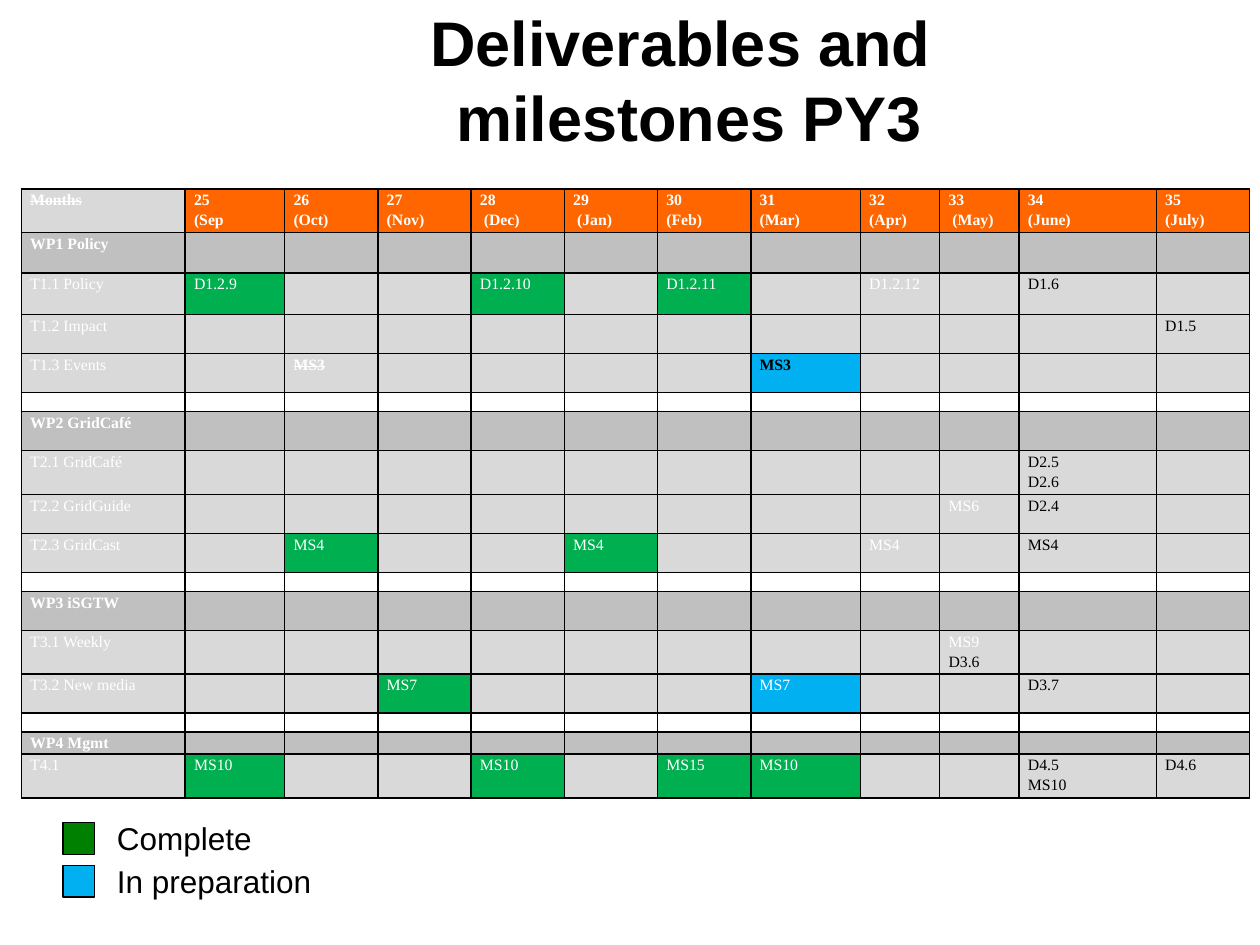
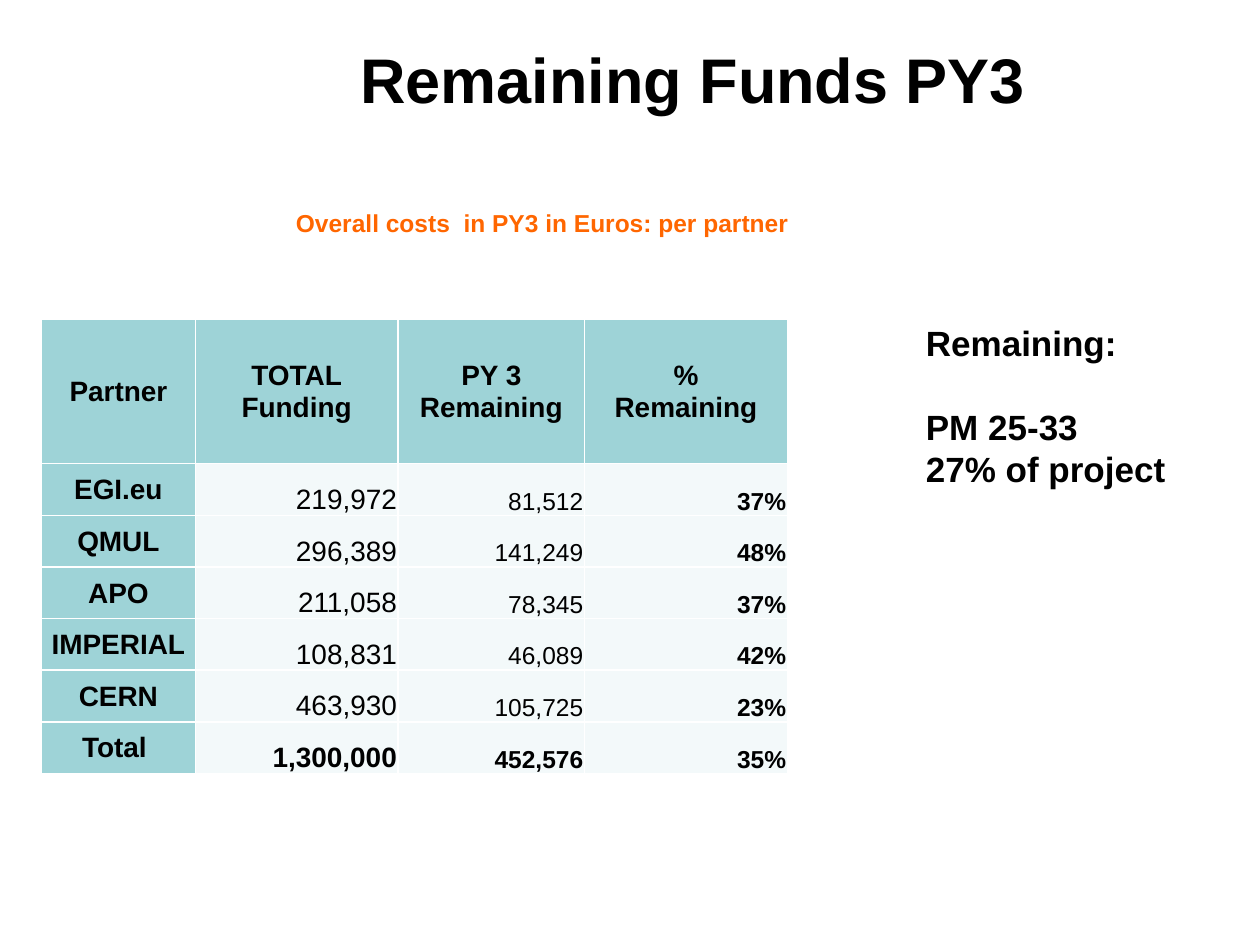
from dataclasses import dataclass
from lxml import etree
from pptx import Presentation
from pptx.dml.color import RGBColor as Rgb
from pptx.enum.shapes import MSO_SHAPE as Shape
from pptx.enum.text import MSO_ANCHOR as Anchor, PP_ALIGN as Align
from pptx.oxml.ns import qn
from pptx.util import Inches, Pt


@dataclass(frozen=True)
class Theme:
    black: str = "000000"
    white: str = "FFFFFF"
    orange: str = "FF6600"
    light: str = "D9D9D9"
    grey: str = "C0C0C0"
    green: str = "00B050"
    dark: str = "008000"
    blue: str = "00B0F0"
    teal: str = "9ED3D7"
    pale: str = "F3F9FA"
    sans: str = "Arial"
    serif: str = "Times New Roman"
    title: int = 36
    side: int = 20
    legend: int = 18
    head: int = 16
    note: int = 14
    plan: int = 9
    empty: int = 6


T = Theme()

# Looks of a plan cell: fill, text colour, bold
DONE = (T.green, T.white, False)
PREP = (T.blue, T.white, False)
MOVED = (T.blue, T.black, True)
LATE = (T.light, T.white, False)
GONE = (T.light, T.white, True)
DUE = (T.light, T.black, False)

MONTHS = ["25\n(Sep", "26\n(Oct)", "27\n(Nov)", "28\n (Dec)", "29\n (Jan)",
          "30\n(Feb)", "31\n(Mar)", "32\n(Apr)", "33\n (May)", "34\n(June)",
          "35\n(July)"]
FIRST = 25
PLAN_COLS = [1.3, 0.79, 0.74, 0.74, 0.74, 0.74, 0.74, 0.87, 0.63, 0.63,
             1.09, 0.74]

# Row label, height, entries by project month
PLAN = [
    ("WP1 Policy", 0.32, {}),
    ("T1.1 Policy", 0.33, {25: ("D1.2.9", DONE), 28: ("D1.2.10", DONE),
                           30: ("D1.2.11", DONE), 32: ("D1.2.12", LATE),
                           34: ("D1.6", DUE)}),
    ("T1.2 Impact", 0.31, {35: ("D1.5", DUE)}),
    ("T1.3 Events", 0.31, {26: ("MS3", GONE), 31: ("MS3", MOVED)}),
    ("", 0.15, {}),
    ("WP2 GridCafé", 0.31, {}),
    ("T2.1 GridCafé", 0.35, {34: ("D2.5\nD2.6", DUE)}),
    ("T2.2 GridGuide", 0.31, {33: ("MS6", LATE), 34: ("D2.4", DUE)}),
    ("T2.3 GridCast", 0.31, {26: ("MS4", DONE), 29: ("MS4", DONE),
                             32: ("MS4", LATE), 34: ("MS4", DUE)}),
    ("", 0.15, {}),
    ("WP3 iSGTW", 0.31, {}),
    ("T3.1 Weekly", 0.34, {33: ("MS9\nD3.6", LATE)}),
    ("T3.2 New media", 0.31, {27: ("MS7", DONE), 31: ("MS7", PREP),
                              34: ("D3.7", DUE)}),
    ("", 0.15, {}),
    ("WP4 Mgmt", 0.17, {}),
    ("T4.1", 0.35, {25: ("MS10", DONE), 28: ("MS10", DONE),
                    30: ("MS15", DONE), 31: ("MS10", DONE),
                    34: ("D4.5\nMS10", DUE), 35: ("D4.6", DUE)}),
]

FUND_COLS = [1.22, 1.61, 1.48, 1.61]
FUND_HEAD = ["Partner", "TOTAL\nFunding", "PY 3 Remaining", "%\nRemaining"]
FUNDS = [
    ("EGI.eu", "219,972", "81,512", "37%"),
    ("QMUL", "296,389", "141,249", "48%"),
    ("APO", "211,058", "78,345", "37%"),
    ("IMPERIAL", "108,831", "46,089", "42%"),
    ("CERN", "463,930", "105,725", "23%"),
    ("Total ", "1,300,000", "452,576", "35%"),
]


def put(item, vals):
    for key, val in vals.items():
        setattr(item, key, val)


class Deck:
    def __init__(self):
        self.prs = Presentation()
        put(self.prs, {"slide_width": Inches(10),
                       "slide_height": Inches(7.5)})

    def page(self, title, left):
        self.slide = self.prs.slides.add_slide(self.prs.slide_layouts[6])
        self.text((left, 0, 9, 1.25), title, T.title, bold=True,
                  align=Align.CENTER, anchor=Anchor.MIDDLE)

    def lines(self, frame, text, size, color=T.black, bold=False,
              face=T.sans, **para):
        for i, line in enumerate(text.split("\n")):
            par = frame.add_paragraph() if i else frame.paragraphs[0]
            par.text = line
            put(par, para)
            for run in par.runs:
                put(run.font, {"size": Pt(size), "name": face, "bold": bold})
                run.font.color.rgb = Rgb.from_string(color)

    def text(self, box, text, size, color=T.black, bold=False,
             align=Align.LEFT, anchor=Anchor.TOP):
        frame = self.slide.shapes.add_textbox(*map(Inches, box)).text_frame
        put(frame, {"word_wrap": True, "vertical_anchor": anchor})
        self.lines(frame, text, size, color, bold, alignment=align)
        return frame

    def key(self, top, text, fill):
        """Draw one legend entry: a square and its label."""
        box = self.slide.shapes.add_shape(
            Shape.RECTANGLE, *map(Inches, (0.5, top, 0.25, 0.25)))
        box.shadow.inherit = False
        box.fill.solid()
        box.fill.fore_color.rgb = Rgb.from_string(fill)
        box.line.color.rgb = Rgb.from_string(T.black)
        box.line.width = Pt(0.75)
        self.text((0.83, top - 0.08, 2.17, 0.4), text, T.legend)

    def table(self, left, top, cols, rows):
        box = map(Inches, (left, top, sum(cols), sum(rows)))
        grid = self.slide.shapes.add_table(len(rows), len(cols), *box).table
        put(grid, {"first_row": False, "horz_banding": False})
        for col, width in zip(grid.columns, cols):
            col.width = Inches(width)
        for row, height in zip(grid.rows, rows):
            row.height = Inches(height)
        return grid

    def cell(self, cell, text, fill, edge, size, pads, anchor=Anchor.TOP,
             **style):
        names = ("left", "top", "right", "bottom")
        put(cell, {f"margin_{n}": Inches(p) for n, p in zip(names, pads)})
        cell.vertical_anchor = anchor
        cell.fill.solid()
        cell.fill.fore_color.rgb = Rgb.from_string(fill)
        props = cell._tc.get_or_add_tcPr()
        for i, side in enumerate("LRTB"):
            line = etree.Element(qn(f"a:ln{side}"), w=str(Pt(1)))
            solid = etree.SubElement(line, qn("a:solidFill"))
            etree.SubElement(solid, qn("a:srgbClr"), val=edge)
            props.insert(i, line)
        if text:
            self.lines(cell.text_frame, text, size, **style)
        else:
            par = cell.text_frame.paragraphs[0]._p
            etree.SubElement(par, qn("a:endParaRPr"), sz=str(T.empty * 100))


def plan(deck):
    deck.page("Deliverables and \vmilestones PY3", 0.97)
    deck.key(6.53, "Complete", T.dark)
    deck.key(6.87, "In preparation", T.blue)
    grid = deck.table(0.17, 1.5, PLAN_COLS,
                      [0.34] + [height for _, height, _ in PLAN])

    def fill(row, col, text, look, align=Align.JUSTIFY):
        back, color, bold = look
        deck.cell(grid.cell(row, col), text, back, T.black, T.plan,
                  (0.07, 0, 0.07, 0), color=color, bold=bold, face=T.serif,
                  alignment=align, line_spacing=1.15)
        if look == GONE:
            run = grid.cell(row, col).text_frame.paragraphs[0].runs[0]
            run._r.get_or_add_rPr().set("strike", "sngStrike")

    for col, text in enumerate(["Months"] + MONTHS):
        back = T.orange if col else T.light
        fill(0, col, text, (back, T.white, True), Align.LEFT)
    for row, (label, _, marks) in enumerate(PLAN, 1):
        group = label.startswith("WP")
        back = T.grey if group else T.light if label else T.white
        base = (back, T.white, group)
        fill(row, 0, label, base)
        for col in range(1, len(PLAN_COLS)):
            fill(row, col, *marks.get(col + FIRST - 1, ("", base)))
            for par in grid.cell(row, col).text_frame.paragraphs:
                if par.text == "D3.6":
                    par.runs[0].font.color.rgb = Rgb.from_string(T.black)


def funds(deck):
    deck.page("Remaining Funds PY3", 1)
    deck.text((2.25, 1.6, 5.83, 0.34),
              "Overall costs  in PY3 in Euros: per partner",
              T.note, T.orange, True)
    side = deck.text((7.25, 2.5, 2.33, 1.45),
                     "Remaining:\nPM 25-33\n27% of project", T.side,
                     bold=True)
    side.paragraphs[1].space_before = Pt(24)
    grid = deck.table(0.33, 2.53, FUND_COLS, [1.15] + [0.41] * len(FUNDS))
    for row, texts in enumerate([FUND_HEAD] + FUNDS):
        for col, text in enumerate(texts):
            label = row == 0 or col == 0
            deck.cell(grid.cell(row, col), text,
                      T.teal if label else T.pale, T.white,
                      T.head if label or col == 1 else T.note,
                      (0.01, 0.01, 0.01, 0),
                      Anchor.MIDDLE if label else Anchor.BOTTOM,
                      bold=label or col == 3 or row == len(FUNDS),
                      alignment=Align.CENTER if label else Align.RIGHT)


def main():
    deck = Deck()
    plan(deck)
    funds(deck)
    deck.prs.save("out.pptx")


if __name__ == "__main__":
    main()
